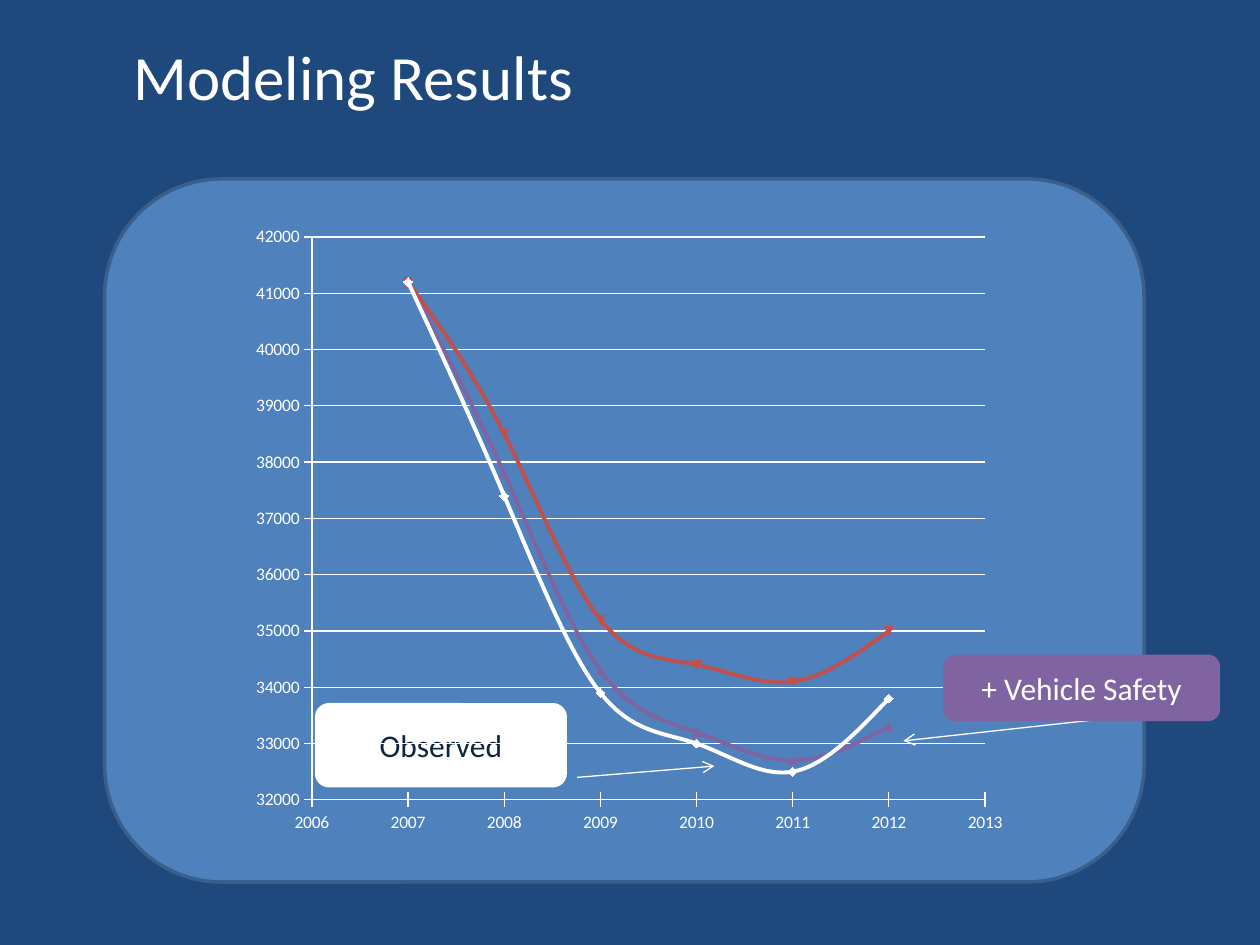
from dataclasses import dataclass

from lxml import etree
from pptx import Presentation
from pptx.chart.data import XyChartData
from pptx.dml.color import RGBColor
from pptx.enum.chart import XL_CHART_TYPE, XL_MARKER_STYLE, XL_TICK_MARK
from pptx.enum.shapes import MSO_CONNECTOR, MSO_SHAPE
from pptx.enum.text import MSO_ANCHOR, PP_ALIGN
from pptx.oxml import parse_xml
from pptx.oxml.ns import nsdecls, qn
from pptx.util import Inches, Pt

SMOOTH_SCATTER = XL_CHART_TYPE.XY_SCATTER_SMOOTH
AUTO_MARKER = XL_MARKER_STYLE.AUTOMATIC
TICK_CROSS = XL_TICK_MARK.CROSS
ROUNDED = MSO_SHAPE.ROUNDED_RECTANGLE
STRAIGHT = MSO_CONNECTOR.STRAIGHT
MIDDLE = MSO_ANCHOR.MIDDLE
LEFT, CENTER = PP_ALIGN.LEFT, PP_ALIGN.CENTER


@dataclass(frozen=True)
class Theme:
    font: str = "Calibri"
    background: str = "1F497D"
    panel: str = "4F81BD"
    panel_edge: str = "3A5F8C"
    white: str = "FFFFFF"
    dark: str = "0F243E"
    red: str = "C0504D"
    purple: str = "8064A2"
    title_size: int = 36
    label_size: int = 18
    axis_size: int = 10
    edge_width: float = 2
    thin_width: float = 0.75
    curve_width: float = 2.25


THEME = Theme()
YEARS = range(2007, 2013)
CURVES = [
    ("Series 1", THEME.white, [41200, 37400, 33900, 33000, 32500, 33800]),
    ("Series 2", THEME.red, [41200, 38500, 35200, 34400, 34100, 35000]),
    ("Series 3", THEME.purple, [41200, 37800, 34300, 33200, 32700, 33300]),
]
# Inner plot area as fractions of the chart frame
PLOT_AREA = {"x": 0.09, "y": 0.036, "w": 0.866, "h": 0.892}


def rgb(color):
    return RGBColor.from_string(color)


def write_text(frame, text, *, size, color=THEME.white, align=LEFT):
    frame.word_wrap = True
    paragraph = frame.paragraphs[0]
    paragraph.alignment = align
    run = paragraph.add_run()
    run.text = text
    run.font.name = THEME.font
    run.font.size = Pt(size)
    run.font.color.rgb = rgb(color)


def style_line(line, color, width):
    line.color.rgb = rgb(color)
    line.width = Pt(width)


def add_rounded_box(slide, left, top, width, height, fill, edge=None):
    box = slide.shapes.add_shape(
        ROUNDED, Inches(left), Inches(top), Inches(width), Inches(height))
    box.shadow.inherit = False
    box.fill.solid()
    box.fill.fore_color.rgb = rgb(fill)
    if edge:
        style_line(box.line, edge, THEME.edge_width)
    else:
        box.line.fill.background()
    return box


def add_label(slide, text, position, fill, color, edge=None):
    label = add_rounded_box(slide, *position, fill, edge)
    label.text_frame.vertical_anchor = MIDDLE
    write_text(label.text_frame, text, size=THEME.label_size, color=color,
               align=CENTER)


def add_arrow(slide, start, end):
    arrow = slide.shapes.add_connector(
        STRAIGHT, *(Inches(length) for length in (*start, *end)))
    style_line(arrow.line, THEME.white, THEME.thin_width)
    etree.SubElement(arrow.line._get_or_add_ln(), qn("a:tailEnd"), type="arrow")
    etree.SubElement(arrow._element.spPr, qn("a:effectLst"))


def style_axis(axis, low, high, step):
    axis.minimum_scale, axis.maximum_scale, axis.major_unit = low, high, step
    axis.major_tick_mark = TICK_CROSS
    axis.tick_labels.number_format = "0"
    axis.tick_labels.number_format_is_linked = False
    style_line(axis.format.line, THEME.white, THEME.thin_width)


def place_plot_area(chart):
    plot_area = chart._chartSpace.chart.plotArea
    for layout in plot_area.findall(qn("c:layout")):
        plot_area.remove(layout)
    fractions = "".join(
        f'<c:{side} val="{share}"/>' for side, share in PLOT_AREA.items())
    plot_area.insert(0, parse_xml(
        f'<c:layout {nsdecls("c")}><c:manualLayout>'
        '<c:layoutTarget val="inner"/><c:xMode val="edge"/>'
        f'<c:yMode val="edge"/>{fractions}</c:manualLayout></c:layout>'))


def add_results_chart(slide):
    results = XyChartData()
    for name, _, values in CURVES:
        curve = results.add_series(name)
        for year, value in zip(YEARS, values):
            curve.add_data_point(year, value)
    chart = slide.shapes.add_chart(
        SMOOTH_SCATTER, Inches(1.92), Inches(1.7), Inches(6.17), Inches(5.01),
        results).chart

    chart.has_title = False
    chart.has_legend = False
    chart.font.name = THEME.font
    chart.font.size = Pt(THEME.axis_size)
    chart.font.color.rgb = rgb(THEME.white)
    place_plot_area(chart)

    # Axes and gridlines
    style_axis(chart.category_axis, 2006, 2013, 1)
    style_axis(chart.value_axis, 32000, 42000, 1000)
    chart.category_axis.has_major_gridlines = False
    chart.value_axis.has_major_gridlines = True
    style_line(chart.value_axis.major_gridlines.format.line, THEME.white,
               THEME.thin_width)

    # Curves
    plot = chart.plots[0]
    plot.vary_by_categories = False
    for curve, (_, color, _) in zip(plot.series, CURVES):
        curve._element.get_or_add_smooth().val = True
        style_line(curve.format.line, color, THEME.curve_width)
        curve.marker.style = AUTO_MARKER
        curve.marker.size = 5
        curve.marker.format.fill.solid()
        curve.marker.format.fill.fore_color.rgb = rgb(color)
        style_line(curve.marker.format.line, color, THEME.thin_width)


def main():
    deck = Presentation()
    deck.slide_width, deck.slide_height = Inches(10), Inches(7.5)
    slide = deck.slides.add_slide(deck.slide_layouts[6])
    slide.background.fill.solid()
    slide.background.fill.fore_color.rgb = rgb(THEME.background)

    # Title
    title = slide.shapes.add_textbox(
        Inches(0.96), Inches(0.25), Inches(7.92), Inches(0.71))
    write_text(title.text_frame, "Modeling Results", size=THEME.title_size)

    # Panel, chart and callouts, from back to front
    add_rounded_box(slide, 0.83, 1.42, 8.25, 5.58, THEME.panel,
                    THEME.panel_edge)
    add_arrow(slide, (8.72, 5.71), (7.17, 5.88))
    add_label(slide, "Observed", (2.5, 5.58, 2, 0.67), THEME.white, THEME.dark)
    add_results_chart(slide)
    add_arrow(slide, (4.58, 6.17), (5.67, 6.08))
    add_label(slide, "+ Vehicle Safety", (7.5, 5.21, 2.17, 0.5), THEME.purple,
              THEME.white, THEME.purple)

    deck.save("out.pptx")


if __name__ == "__main__":
    main()
